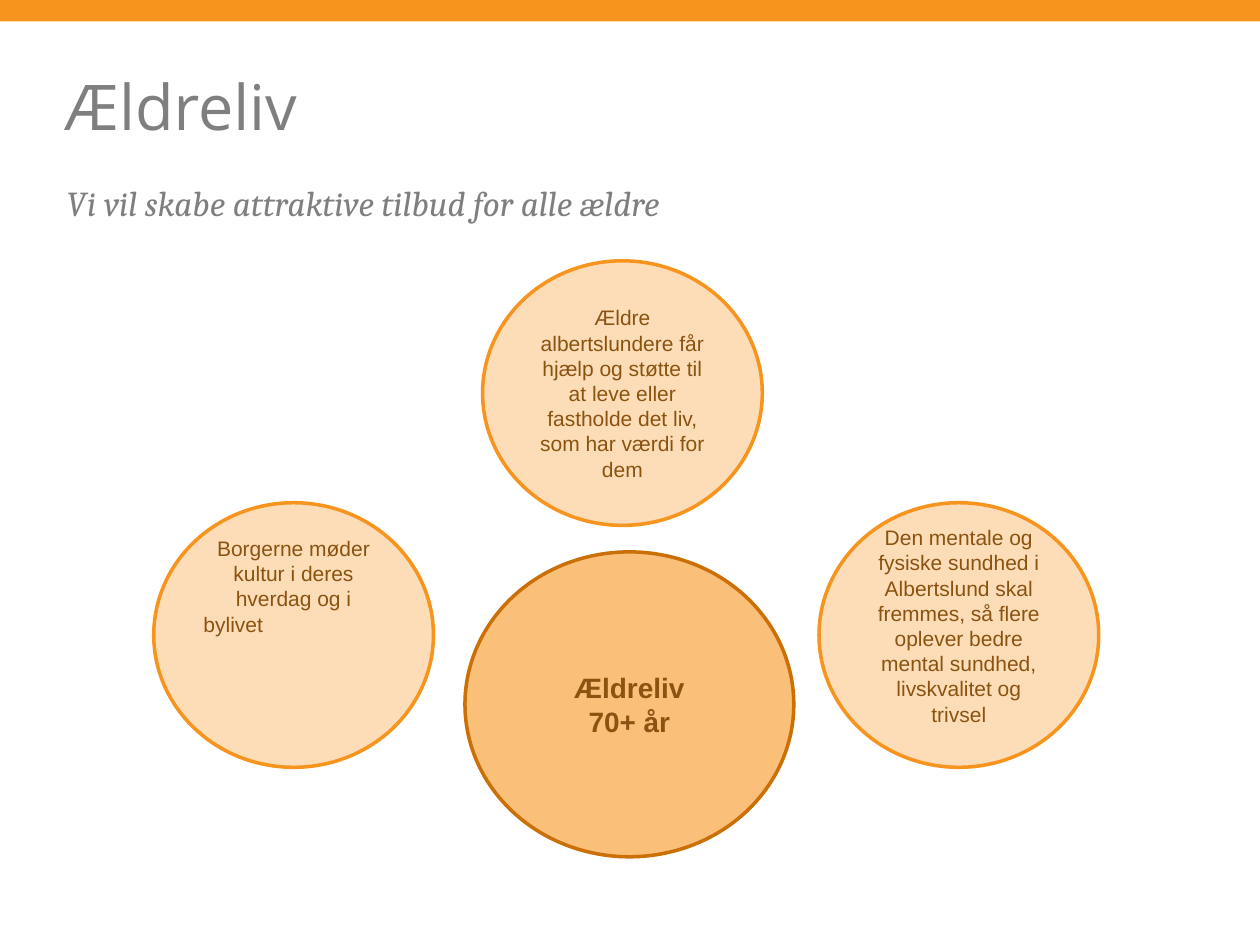
from dataclasses import dataclass

import pptx
import pptx.util
from pptx.dml.color import RGBColor
from pptx.enum.shapes import MSO_SHAPE
from pptx.enum.text import MSO_ANCHOR, PP_ALIGN
from pptx.util import Inches

ORANGE = RGBColor(0xF7, 0x94, 0x1E)
PALE = RGBColor(0xFD, 0xDD, 0xB7)
AMBER = RGBColor(0xFA, 0xBF, 0x78)
RUST = RGBColor(0xCA, 0x70, 0x07)
BROWN = RGBColor(0x8B, 0x53, 0x11)
GREY = RGBColor(0x7F, 0x7F, 0x7F)


@dataclass
class Bubble:
    left: float
    top: float
    lines: list[str]
    width: float = 2.22
    height: float = 2.1
    fill: RGBColor = PALE
    edge: RGBColor = ORANGE
    size: int = 12
    bold: bool = False
    foot: float = 0.04  # bottom inset, which lifts the text


BUBBLES = [
    Bubble(6.5, 3.99, ["Den mentale og fysiske sundhed i Albertslund skal fremmes, "
                       "så flere oplever bedre mental sundhed, livskvalitet og trivsel"],
           foot=0.19),
    Bubble(3.69, 4.38, ["Ældreliv", "70+ år"], width=2.61, height=2.42,
           fill=AMBER, edge=RUST, size=16, bold=True),
    Bubble(1.22, 3.99, ["Borgerne møder kultur i deres hverdag og i", "bylivet"], foot=0.82),
    Bubble(3.83, 2.07, ["Ældre albertslundere får hjælp og støtte til at leve eller "
                        "fastholde det liv, som har værdi for dem"]),
]


def write(frame, lines: list[str], *, font: str, size: int, color: RGBColor,
          bold: bool = False, italic: bool = False, align=PP_ALIGN.LEFT,
          anchor=MSO_ANCHOR.TOP, insets=(0.1, 0.05, 0.1, 0.05), spacing: float = 1.0) -> None:
    """Fill a text frame, one paragraph per line; insets run left, top, right, bottom."""
    frame.word_wrap = True
    frame.vertical_anchor = anchor
    (frame.margin_left, frame.margin_top,
     frame.margin_right, frame.margin_bottom) = map(Inches, insets)
    for i, line in enumerate(lines):
        para = frame.add_paragraph() if i else frame.paragraphs[0]
        para.alignment = align
        para.line_spacing = spacing
        run = para.add_run()
        run.text = line
        run.font.name = font
        run.font.size = pptx.util.Pt(size)
        run.font.color.rgb = color
        run.font.bold = bold
        run.font.italic = italic


def draw(slide, item: Bubble):
    oval = slide.shapes.add_shape(MSO_SHAPE.OVAL, Inches(item.left), Inches(item.top),
                                  Inches(item.width), Inches(item.height))
    oval.shadow.inherit = False
    oval.fill.solid()
    oval.fill.fore_color.rgb = item.fill
    oval.line.color.rgb = item.edge
    oval.line.width = pptx.util.Pt(2)
    write(oval.text_frame, item.lines, font="Arial", size=item.size, color=BROWN,
          bold=item.bold, align=PP_ALIGN.CENTER, anchor=MSO_ANCHOR.MIDDLE,
          insets=(0.07, 0.04, 0.07, item.foot))
    return oval


def main() -> None:
    deck = pptx.Presentation()
    deck.slide_width, deck.slide_height = Inches(10), Inches(7.5)
    slide = deck.slides.add_slide(deck.slide_layouts[6])

    band = slide.shapes.add_shape(MSO_SHAPE.RECTANGLE, 0, 0, Inches(10), Inches(0.17))
    band.shadow.inherit = False
    band.fill.solid()
    band.fill.fore_color.rgb = ORANGE
    band.line.fill.background()

    title = slide.shapes.add_textbox(Inches(0.51), Inches(0.64), Inches(8.94), Inches(1.22))
    write(title.text_frame, ["Ældreliv"], font="Open Sans", size=36, color=GREY,
          insets=(0, 0, 0, 0), spacing=0.83)

    ovals = [draw(slide, item) for item in BUBBLES]
    culture = ovals[2]
    culture.text_frame.paragraphs[-1].alignment = PP_ALIGN.LEFT

    motto = slide.shapes.add_textbox(Inches(0.43), Inches(1.39), Inches(9.02), Inches(0.44))
    write(motto.text_frame, ["Vi vil skabe attraktive tilbud for alle ældre"],
          font="Cambria", size=20, color=GREY, italic=True)

    deck.save("out.pptx")


if __name__ == "__main__":
    main()
